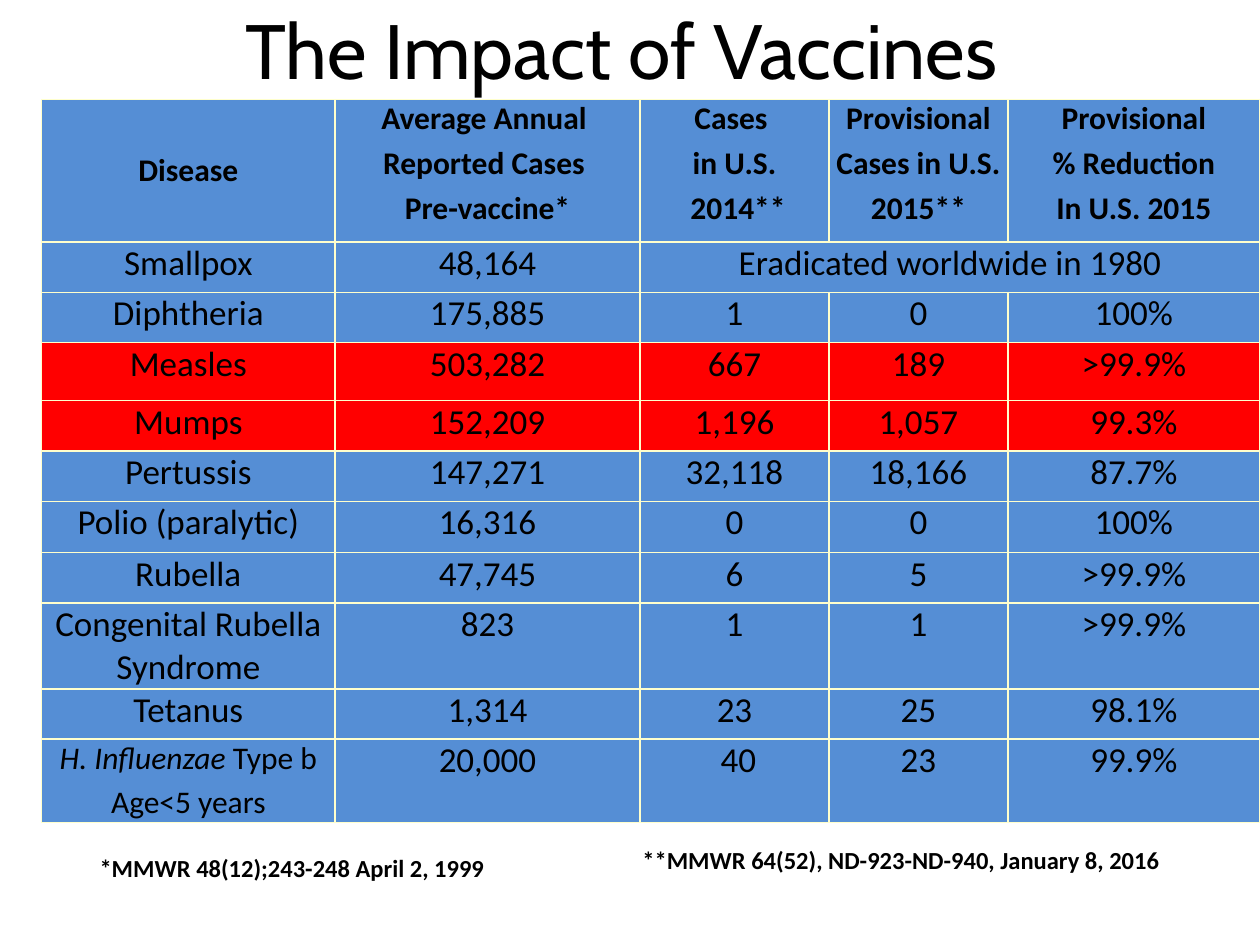
from dataclasses import dataclass

from lxml.etree import SubElement
from pptx import Presentation
from pptx.dml.color import RGBColor
from pptx.enum.text import MSO_ANCHOR, PP_ALIGN
from pptx.oxml.ns import qn
from pptx.util import Inches, Pt


@dataclass(frozen=True)
class Theme:
    ink: str = "000000"
    blue: str = "558ED5"
    red: str = "FF0000"
    border: str = "FFFFCC"
    title_font: str = "Cabin"
    body_font: str = "Calibri"
    title: int = 44
    body: int = 20
    head: int = 18
    note: int = 14


T = Theme()
W, H = Inches(10), Inches(7.5)

# Column widths as percent of the slide, row heights as multiples of one row
COLUMNS = [23.3, 24.2, 15, 14.2, 20]
ROWS = [2.83, 1, 1, 1.15, 1, 1, 1.02, 1, 1.4, 1, 1.1]
ROW_UNIT = 5.33

# Line breaks part paragraphs; underscores enclose italics
HEADERS = [
    "Disease",
    "Average Annual \nReported Cases \nPre-vaccine*",
    "Cases \nin U.S.\n 2014**",
    "Provisional\nCases in U.S.\n2015**",
    "Provisional\n% Reduction\nIn U.S. 2015",
]
DISEASES = [
    ["Smallpox", "48,164", "Eradicated worldwide in 1980"],
    ["Diphtheria", "175,885", "1", "0", "100%"],
    ["Measles", "503,282", "667", "189", ">99.9%"],
    ["Mumps", "152,209", "1,196", "1,057", "99.3%"],
    ["Pertussis", "147,271", "32,118", "18,166", "87.7%"],
    ["Polio (paralytic)", "16,316", "0", "0", "100%"],
    ["Rubella", "47,745", "6", "5", ">99.9%"],
    ["Congenital Rubella Syndrome", "823", "1", "1", ">99.9%"],
    ["Tetanus", "1,314", "23", "25", "98.1%"],
    ["_H. Influenzae _Type b\nAge<5 years", "20,000", " 40", "23", "99.9%"],
]
HIGHLIGHTED = {"Measles", "Mumps"}


def across(percent):
    return round(W * percent / 100)


def down(percent):
    return round(H * percent / 100)


def write(tf, text, size, font=T.body_font, bold=False, align=None, before=None):
    """Fill a text frame; before is paragraph spacing in percent."""
    for i, line in enumerate(text.split("\n")):
        p = tf.add_paragraph() if i else tf.paragraphs[0]
        p.alignment = align
        if before:
            spacing = SubElement(p._p.get_or_add_pPr(), qn("a:spcBef"))
            SubElement(spacing, qn("a:spcPct"), val=str(before * 1000))
        for j, part in enumerate(line.split("_")):
            if not part:
                continue
            r = p.add_run()
            r.text = part
            r.font.name, r.font.size = font, Pt(size)
            r.font.bold, r.font.italic = bold, j % 2 == 1
            r.font.color.rgb = RGBColor.from_string(T.ink)


def add_text(s, x, y, w, h, text, size, left=0.1, top=0.05, **fmt):
    sp = s.shapes.add_textbox(across(x), down(y), across(w), down(h))
    tf = sp.text_frame
    tf.word_wrap = True
    tf.margin_left, tf.margin_top = Inches(left), Inches(top)
    write(tf, text, size, **fmt)


def style_cell(cell, fill):
    cell.margin_left = cell.margin_right = cell.margin_top = cell.margin_bottom = 0
    tcPr = cell._tc.get_or_add_tcPr()
    for side in ("lnL", "lnR", "lnT", "lnB"):
        ln = SubElement(tcPr, qn(f"a:{side}"), w=str(Pt(1)))
        SubElement(SubElement(ln, qn("a:solidFill")), qn("a:srgbClr"), val=T.border)
    cell.fill.solid()
    cell.fill.fore_color.rgb = RGBColor.from_string(fill)


def add_disease_table(s, x, y):
    frame = s.shapes.add_table(len(ROWS), len(COLUMNS), across(x), down(y),
                               across(sum(COLUMNS)), down(sum(ROWS) * ROW_UNIT))
    table = frame.table
    table.first_row = table.horz_banding = False
    for column, width in zip(table.columns, COLUMNS):
        column.width = across(width)
    for row, height in zip(table.rows, ROWS):
        row.height = down(height * ROW_UNIT)

    for i, texts in enumerate([HEADERS] + DISEASES):
        fill = T.red if texts[0] in HIGHLIGHTED else T.blue
        for cell in table.rows[i].cells:
            style_cell(cell, fill)
        # A short row lets its last text span the remaining columns
        last = len(texts) - 1
        if len(texts) < len(COLUMNS):
            table.cell(i, last).merge(table.cell(i, len(COLUMNS) - 1))
        for j, text in enumerate(texts):
            small = i == 0 or "\n" in text
            write(table.cell(i, j).text_frame, text, T.head if small else T.body,
                  bold=i == 0, align=PP_ALIGN.CENTER, before=20)
    table.cell(0, 0).vertical_anchor = MSO_ANCHOR.MIDDLE


def main():
    prs = Presentation()
    prs.slide_width, prs.slide_height = W, H
    s = prs.slides.add_slide(prs.slide_layouts[6])

    # Disease table and title
    add_disease_table(s, 3.3, 10.53)
    add_text(s, 10, -0.4, 80, 11.2, "The Impact of Vaccines ", T.title,
             font=T.title_font, align=PP_ALIGN.CENTER)

    # Source notes
    add_text(s, 5.8, 89.07, 37.5, 8.53, "*MMWR 48(12);243-248 April 2, 1999",
             T.note, left=0.21, top=0.09, bold=True)
    add_text(s, 50, 88.8, 43.3, 4.53,
             "**MMWR 64(52), ND-923-ND-940, January 8, 2016", T.note, bold=True)

    prs.save("out.pptx")


if __name__ == "__main__":
    main()
